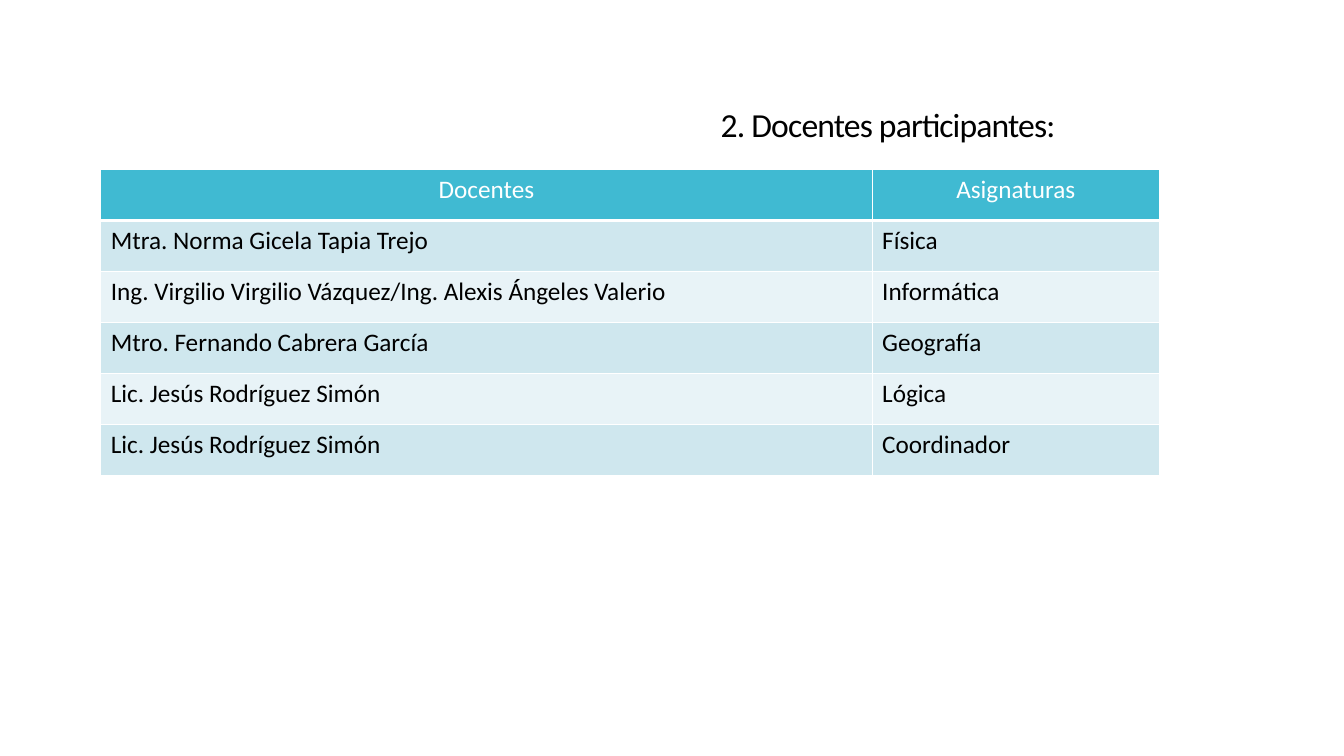
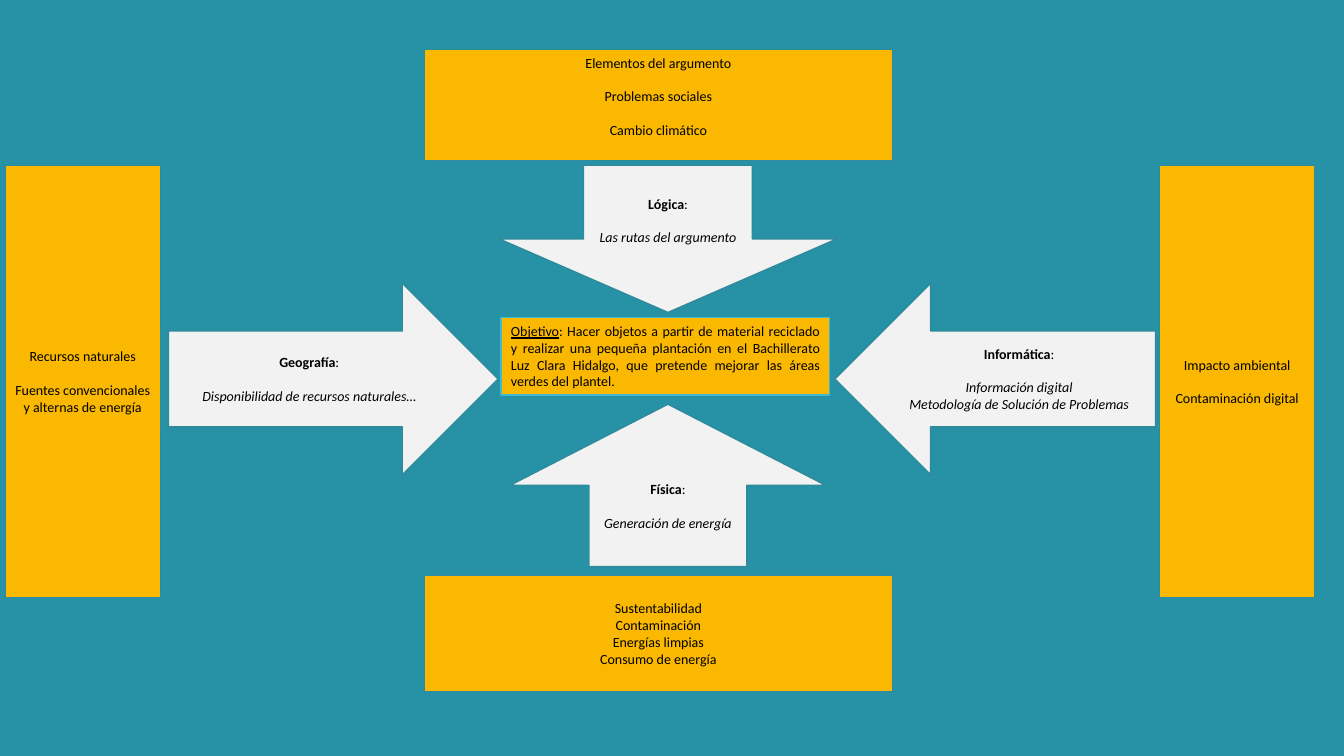
from dataclasses import dataclass

from lxml.etree import SubElement
from pptx import Presentation
from pptx.dml.color import RGBColor
from pptx.enum.shapes import MSO_SHAPE as Shape
from pptx.enum.text import MSO_ANCHOR as Anchor, PP_ALIGN as Align
from pptx.oxml.ns import qn
from pptx.util import Inches, Pt


@dataclass(frozen=True)
class Theme:
    font: str = "Calibri"
    ink: str = "000000"
    white: str = "FFFFFF"
    teal: str = "2791A6"
    cyan: str = "40BAD2"
    edge: str = "2F8A9B"
    amber: str = "FAB900"
    pale: str = "F2F2F2"
    bands: tuple = ("CFE7EE", "E8F3F7")
    title: int = 24
    table: int = 18
    body: int = 10
    gap: int = 12


THEME = Theme()

TEACHERS = [
    ("Docentes", "Asignaturas"),
    ("Mtra. Norma Gicela Tapia Trejo", "Física"),
    ("Ing. Virgilio Virgilio Vázquez/Ing. Alexis Ángeles Valerio", "Informática"),
    ("Mtro. Fernando Cabrera García", "Geografía"),
    ("Lic. Jesús Rodríguez Simón", "Lógica"),
    ("Lic. Jesús Rodríguez Simón", "Coordinador"),
]

OBJECTIVE = (": Hacer objetos a partir de material reciclado y realizar una pequeña "
             "plantación en el Bachillerato Luz Clara Hidalgo, que pretende mejorar "
             "las áreas verdes del plantel.")

SUBJECTS = [
    (Shape.LEFT_ARROW, (8.23, 2.32, 3.18, 1.9), "Informática",
     ["Información digital", "Metodología de Solución de Problemas"]),
    (Shape.UP_ARROW, (5.01, 3.52, 3.13, 1.61), "Física", ["Generación de energía"]),
    (Shape.RIGHT_ARROW, (1.62, 2.32, 3.27, 1.9), "Geografía",
     ["Disponibilidad de recursos naturales…"]),
    (Shape.DOWN_ARROW, (4.9, 1.15, 3.35, 1.46), "Lógica", ["Las rutas del argumento"]),
]

SIDE_W, SIDE_H, WIDE_W = 1.54, 4.29, 4.64
TOPICS = [
    ((11.45, 1.15, SIDE_W, SIDE_H), Anchor.MIDDLE, THEME.gap,
     ["Impacto ambiental", "Contaminación digital"]),
    ((4.16, 5.22, WIDE_W, 1.15), Anchor.MIDDLE, 0,
     ["Sustentabilidad", "Contaminación", "Energías limpias", "Consumo de energía"]),
    ((4.16, 0, WIDE_W, 1.1), Anchor.TOP, THEME.gap,
     ["Elementos del argumento", "Problemas sociales", "Cambio climático"]),
    ((0, 1.15, SIDE_W, SIDE_H), Anchor.MIDDLE, THEME.gap,
     ["Recursos naturales", "Fuentes convencionales y alternas de energía"]),
]


def rgb(value):
    return RGBColor.from_string(value)


def paint(fill, color):
    fill.solid()
    fill.fore_color.rgb = rgb(color)


def add_run(p, text, size, color=THEME.ink, **extra):
    r = p.add_run()
    r.text = text
    formats = {"name": THEME.font, "size": Pt(size), "bold": False, **extra}
    for key, value in formats.items():
        setattr(r.font, key, value)
    r.font.color.rgb = rgb(color)
    return r


def add_paragraphs(tf, paragraphs, align=Align.CENTER):
    for i, (gap, runs) in enumerate(paragraphs):
        p = tf.paragraphs[0] if i == 0 else tf.add_paragraph()
        p.alignment = align
        p.space_before = Pt(gap)
        for text, formats in runs:
            add_run(p, text, THEME.body, **formats)


def add_block(slide, kind, box, fill, paragraphs, line=THEME.edge,
              anchor=Anchor.MIDDLE, align=Align.CENTER):
    sp = slide.shapes.add_shape(kind, *map(Inches, box))
    sp.shadow.inherit = False
    paint(sp.fill, fill)
    sp.line.color.rgb = rgb(line)
    sp.line.width = Pt(1)
    tf = sp.text_frame
    tf.word_wrap = True
    tf.vertical_anchor = anchor
    add_paragraphs(tf, paragraphs, align)


def add_title(slide, box, text):
    tf = slide.shapes.add_textbox(*map(Inches, box)).text_frame
    tf.word_wrap = True
    tf.vertical_anchor = Anchor.MIDDLE
    p = tf.paragraphs[0]
    p.line_spacing = 0.9
    r = add_run(p, text, THEME.title)
    r.font._element.set("spc", "-60")


def add_borders(cell, bottom):
    tcPr = cell._tc.get_or_add_tcPr()
    for side, width in {"L": 1, "R": 1, "T": 1, "B": bottom}.items():
        ln = SubElement(tcPr, qn(f"a:ln{side}"), w=str(Pt(width)))
        fill = SubElement(ln, qn("a:solidFill"))
        SubElement(fill, qn("a:srgbClr"), val=THEME.white)


def add_teacher_table(slide, box, rows, widths):
    table = slide.shapes.add_table(len(rows), len(widths), *map(Inches, box)).table
    for col, width in zip(table.columns, widths):
        col.width = Inches(width)
    for i, values in enumerate(rows):
        header = i == 0
        for j, text in enumerate(values):
            cell = table.cell(i, j)
            add_borders(cell, 3 if header else 1)
            paint(cell.fill, THEME.cyan if header else THEME.bands[(i - 1) % 2])
            p = cell.text_frame.paragraphs[0]
            p.alignment = Align.CENTER if header else Align.LEFT
            add_run(p, text, THEME.table, THEME.white if header else THEME.ink)


def add_objective_map(slide, left, top):
    def place(box):
        x, y, w, h = box
        return left + x, top + y, w, h

    add_block(slide, Shape.RECTANGLE, place((4.92, 2.66, 3.26, 0.77)), THEME.amber,
              [(0, [("Objetivo", {"underline": True}), (OBJECTIVE, {})])],
              line=THEME.cyan, anchor=Anchor.TOP, align=Align.JUSTIFY)
    for kind, box, subject, themes in SUBJECTS:
        heading = (0, [(subject, {"bold": True}), (":", {})])
        details = [(0 if i else THEME.gap, [(text, {"italic": True})])
                   for i, text in enumerate(themes)]
        add_block(slide, kind, place(box), THEME.pale, [heading, *details])
    for box, anchor, gap, topics in TOPICS:
        paragraphs = [(gap if i else 0, [(text, {})]) for i, text in enumerate(topics)]
        add_block(slide, Shape.RECTANGLE, place(box), THEME.amber, paragraphs,
                  anchor=anchor)


def add_slide(prs, background):
    slide = prs.slides.add_slide(prs.slide_layouts[6])
    paint(slide.background.fill, background)
    return slide


def teachers_slide(prs):
    slide = add_slide(prs, THEME.white)
    add_title(slide, (7.05, 0.84, 6.28, 0.84), "2. Docentes participantes:")
    add_teacher_table(slide, (1, 1.68, 10.5, 3.04), TEACHERS, (7.65, 2.85))


def objective_slide(prs):
    add_objective_map(add_slide(prs, THEME.teal), 0.05, 0.49)


def main():
    prs = Presentation()
    prs.slide_width, prs.slide_height = Inches(13.33), Inches(7.5)
    teachers_slide(prs)
    objective_slide(prs)
    prs.save("out.pptx")


if __name__ == "__main__":
    main()
